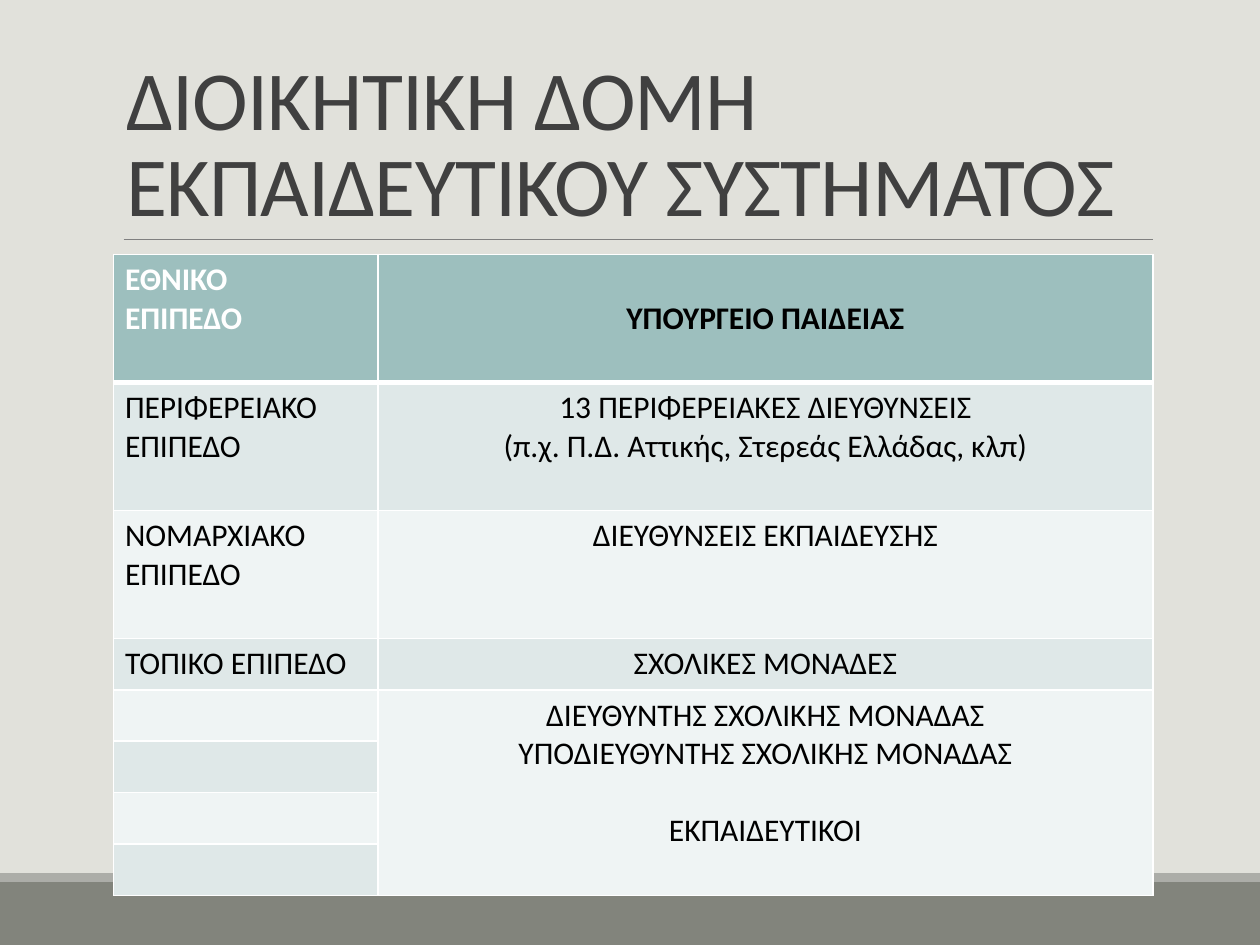
from dataclasses import dataclass

from lxml import etree
from pptx import Presentation
from pptx.dml.color import RGBColor
from pptx.enum.shapes import MSO_CONNECTOR, MSO_SHAPE
from pptx.enum.text import MSO_ANCHOR, MSO_AUTO_SIZE, PP_ALIGN
from pptx.oxml.ns import qn
from pptx.util import Cm, Pt

RECT = MSO_SHAPE.RECTANGLE
STRAIGHT = MSO_CONNECTOR.STRAIGHT
LEFT, CENTER = PP_ALIGN.LEFT, PP_ALIGN.CENTER
TOP, MIDDLE, BOTTOM = MSO_ANCHOR.TOP, MSO_ANCHOR.MIDDLE, MSO_ANCHOR.BOTTOM


@dataclass
class Theme:
    font: str = "Calibri"
    title_size: int = 48
    table_size: int = 18
    back: str = "E1E1DB"
    footer: str = "82847C"
    strip: str = "ACADA8"
    rule: str = "808080"
    title: str = "404040"
    header: str = "9DBFBE"
    bands: tuple = ("EFF4F4", "DFE8E8")
    white: str = "FFFFFF"
    black: str = "000000"


theme = Theme()


def add_run(p, text, size, color, bold=False):
    r = p.add_run()
    r.text = text
    r.font.name = theme.font
    r.font.size = Pt(size)
    r.font.bold = bold
    r.font.color.rgb = RGBColor.from_string(color)
    return r


def set_borders(cell, bottom):
    tcPr = cell._tc.get_or_add_tcPr()
    for side, width in (("lnL", 1), ("lnR", 1), ("lnT", 1), ("lnB", bottom)):
        ln = etree.SubElement(tcPr, qn(f"a:{side}"), w=str(Pt(width)))
        fill = etree.SubElement(ln, qn("a:solidFill"))
        etree.SubElement(fill, qn("a:srgbClr"), val=theme.white)


prs = Presentation()
prs.slide_width, prs.slide_height = Cm(25.4), Cm(19.05)
s = prs.slides.add_slide(prs.slide_layouts[5])
s.background.fill.solid()
s.background.fill.fore_color.rgb = RGBColor.from_string(theme.back)

for top, height, color in ((17.78, 1.27, theme.footer), (17.6, 0.18, theme.strip)):
    sp = s.shapes.add_shape(RECT, 0, Cm(top), prs.slide_width, Cm(height))
    sp.shadow.inherit = False
    sp.fill.solid()
    sp.fill.fore_color.rgb = RGBColor.from_string(color)
    sp.line.fill.background()

rule = s.shapes.add_connector(STRAIGHT, Cm(2.49), Cm(4.83), Cm(23.24), Cm(4.83))
rule.line.color.rgb = RGBColor.from_string(theme.rule)
rule.line.width = Pt(0.5)
etree.SubElement(rule._element.spPr, qn("a:effectLst"))

title = s.shapes.title
title.left, title.top, title.width, title.height = Cm(2.29), Cm(0.79), Cm(20.95), Cm(4.04)
tf = title.text_frame
tf.word_wrap = True
tf.auto_size = MSO_AUTO_SIZE.NONE
tf.vertical_anchor = BOTTOM
p = tf.paragraphs[0]
p.alignment = LEFT
p.line_spacing = 0.85
for i, text in enumerate(("ΔΙΟΙΚΗΤΙΚΗ ΔΟΜΗ", "ΕΚΠΑΙΔΕΥΤΙΚΟΥ ΣΥΣΤΗΜΑΤΟΣ")):
    if i:
        p.add_line_break()
    r = add_run(p, text, theme.title_size, theme.title)
    r.font._element.set("spc", "-50")

rows = [
    (["ΕΘΝΙΚΟ", "ΕΠΙΠΕΔΟ"], ["ΥΠΟΥΡΓΕΙΟ ΠΑΙΔΕΙΑΣ"]),
    (["ΠΕΡΙΦΕΡΕΙΑΚΟ ΕΠΙΠΕΔΟ"],
     ["13 ΠΕΡΙΦΕΡΕΙΑΚΕΣ ΔΙΕΥΘΥΝΣΕΙΣ", "(π.χ. Π.Δ. Αττικής, Στερεάς Ελλάδας, κλπ)"]),
    (["ΝΟΜΑΡΧΙΑΚΟ ΕΠΙΠΕΔΟ"], ["ΔΙΕΥΘΥΝΣΕΙΣ ΕΚΠΑΙΔΕΥΣΗΣ"]),
    (["ΤΟΠΙΚΟ ΕΠΙΠΕΔΟ"], ["ΣΧΟΛΙΚΕΣ ΜΟΝΑΔΕΣ"]),
    ([], ["ΔΙΕΥΘΥΝΤΗΣ ΣΧΟΛΙΚΗΣ ΜΟΝΑΔΑΣ", "ΥΠΟΔΙΕΥΘΥΝΤΗΣ ΣΧΟΛΙΚΗΣ ΜΟΝΑΔΑΣ", "ΕΚΠΑΙΔΕΥΤΙΚΟΙ"]),
    ([], []),
    ([], []),
    ([], []),
]
heights = [2.58] * 3 + [1.03] * 5
table = s.shapes.add_table(len(rows), 2, Cm(2.29), Cm(5.13), Cm(20.95), Cm(sum(heights))).table
for col, width in zip(table.columns, (5.33, 15.62)):
    col.width = Cm(width)

for i, (row, height) in enumerate(zip(rows, heights)):
    table.rows[i].height = Cm(height)
    for j, lines in enumerate(row):
        is_header = i == 0
        cell = table.cell(i, j)
        set_borders(cell, 3 if is_header else 1)
        cell.fill.solid()
        cell.fill.fore_color.rgb = RGBColor.from_string(theme.header if is_header else theme.bands[i % 2])
        cell.margin_left = cell.margin_right = Cm(0.23)
        cell.margin_top = cell.margin_bottom = Cm(0.13)
        cell.vertical_anchor = MIDDLE if is_header and j else TOP
        color = theme.white if is_header and j == 0 else theme.black
        tf = cell.text_frame
        for k, text in enumerate(lines):
            p = tf.add_paragraph() if k else tf.paragraphs[0]
            p.alignment = CENTER if j else LEFT
            if k == 2:
                p.space_before = Pt(22)
            add_run(p, text, theme.table_size, color, is_header)

table.cell(4, 1).merge(table.cell(7, 1))

prs.save("out.pptx")
